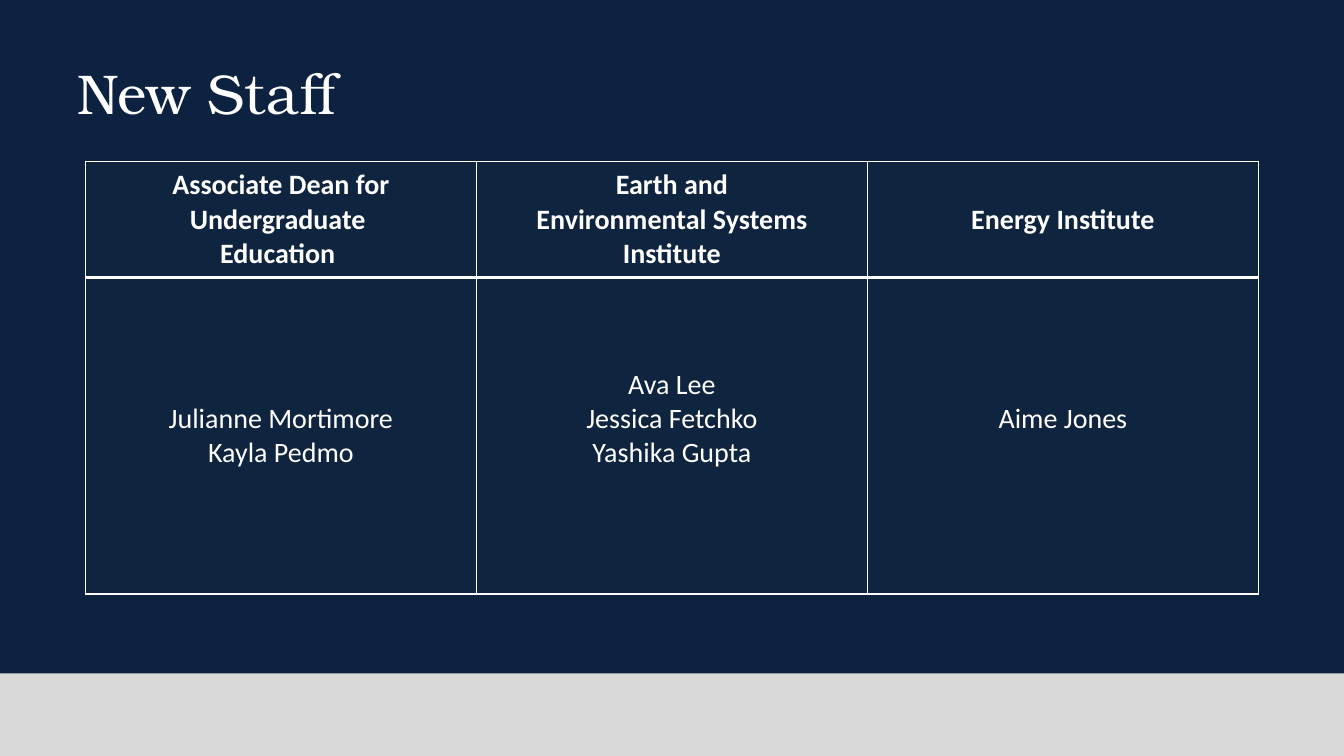
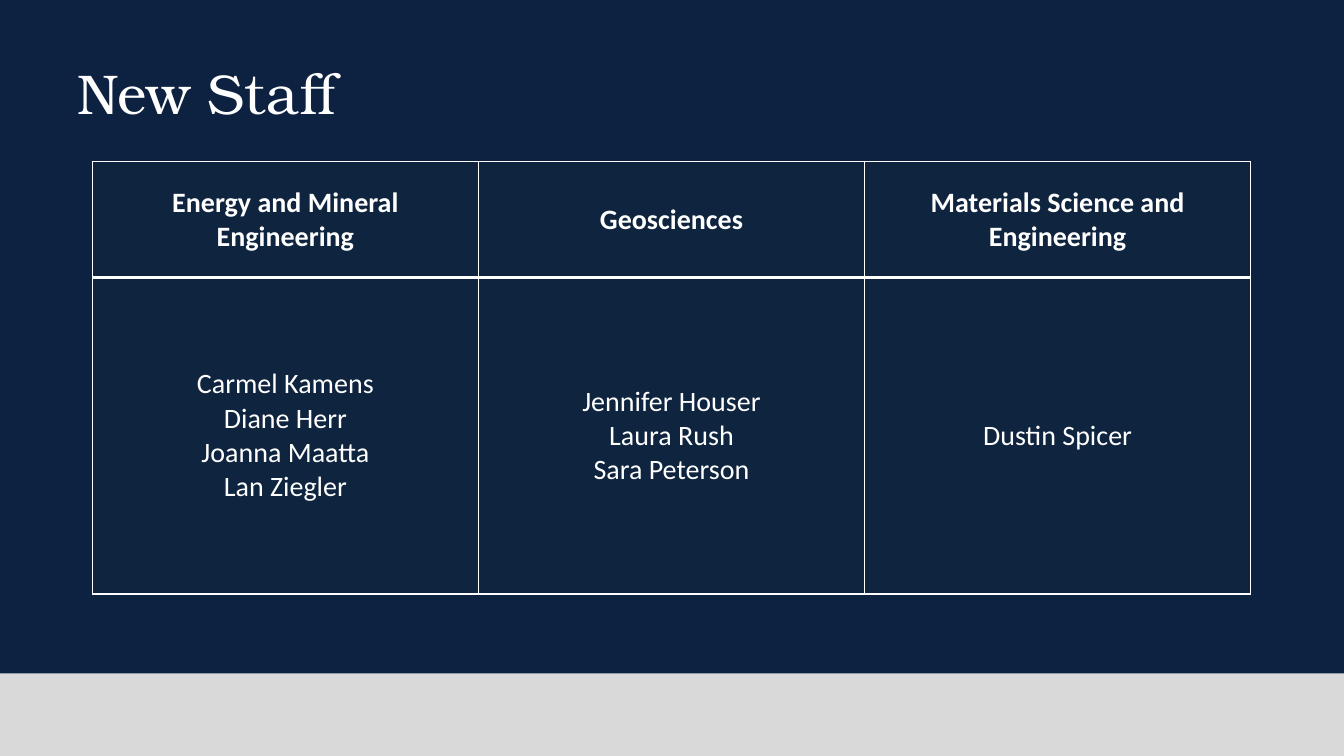
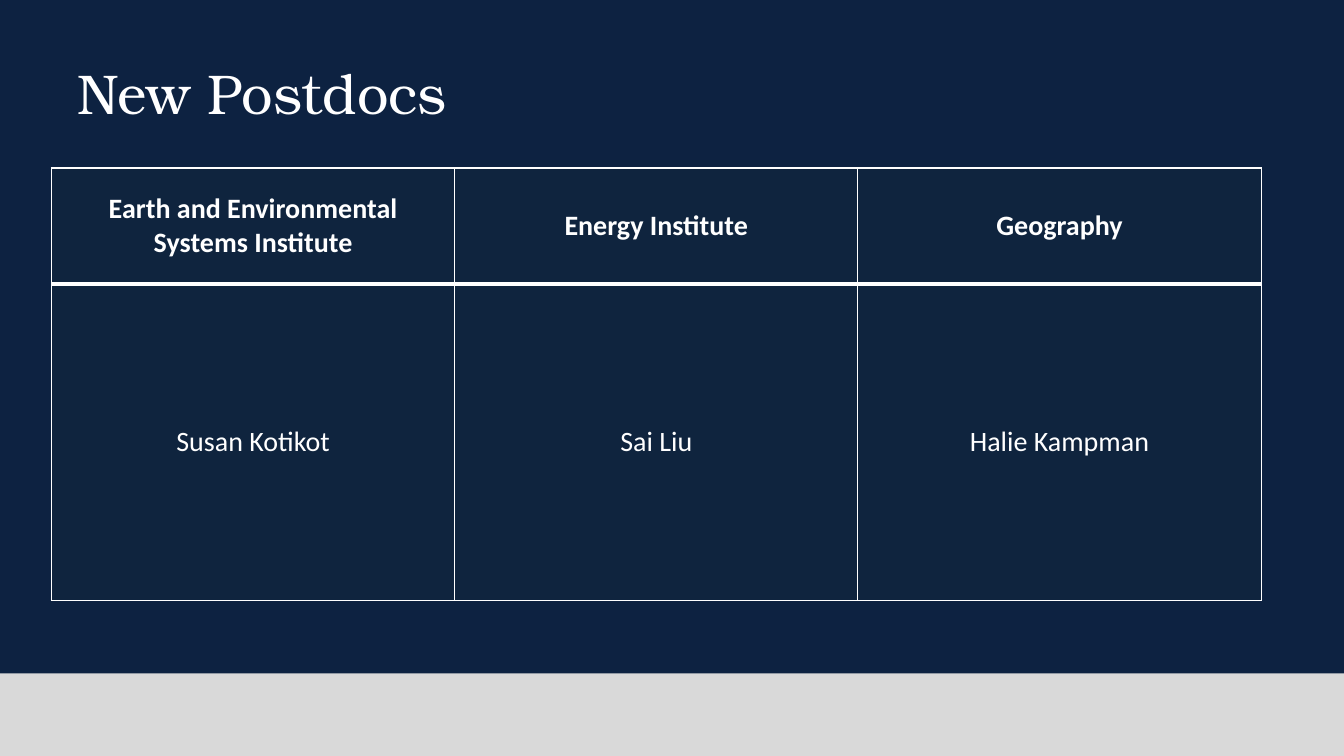
from dataclasses import dataclass

from pptx import Presentation
from pptx import util as u
from pptx.dml import color
from pptx.enum import shapes, text
from pptx.oxml import parse_xml
from pptx.oxml.ns import nsdecls

NAVY = "0D2241"
GREY = "D9D9D9"
CELL_NAVY = "0F243E"
WHITE = "FFFFFF"
TITLE_FONT = "TeX Gyre Bonum"
BODY_FONT = "Calibri"
PAGE_WIDTH, PAGE_HEIGHT = 960, 540
ROW_HEIGHTS = (82.8, 226)
THIN, THICK = 1, 3


@dataclass(frozen=True)
class Band:
    top: float
    height: float
    fill: str


@dataclass(frozen=True)
class Group:
    heading: str
    names: str
    lift: float = 0


@dataclass(frozen=True)
class Roster:
    title: str
    left: float
    top: float
    column_width: float
    groups: tuple[Group, ...]


BANDS = (Band(0, 482.4, NAVY), Band(481, 59, GREY))

ROSTERS = (
    Roster("New Staff", 61, 115.5, 279.3, (
        Group("Associate Dean for Undergraduate \nEducation ",
              "Julianne Mortimore\nKayla Pedmo"),
        Group("Earth and\nEnvironmental Systems Institute",
              "Ava Lee\nJessica Fetchko\nYashika Gupta", 24),
        Group("Energy Institute", "Aime Jones", 24),
    )),
    Roster("New Staff", 66, 115.5, 275.8, (
        Group("Energy and Mineral Engineering",
              "Carmel Kamens\nDiane Herr\nJoanna Maatta\nLan Ziegler"),
        Group("Geosciences", "Jennifer Houser\nLaura Rush\nSara Peterson"),
        Group("Materials Science and Engineering", "Dustin Spicer"),
    )),
    Roster("New Postdocs", 36.8, 120, 288, (
        Group("Earth and Environmental Systems Institute", "Susan Kotikot"),
        Group("Energy Institute", "Sai Liu"),
        Group("Geography", "Halie Kampman"),
    )),
)


def rgb(value: str) -> color.RGBColor:
    return color.RGBColor.from_string(value)


def style_text(frame, font: str, size: float, bold: bool, align) -> None:
    for para in frame.paragraphs:
        para.alignment = align
        for span in para.runs:
            span.font.name = font
            span.font.size = u.Pt(size)
            span.font.bold = bold
            span.font.color.rgb = rgb(WHITE)


def add_band(page, band: Band) -> None:
    shape = page.shapes.add_shape(
        shapes.MSO_SHAPE.RECTANGLE, u.Pt(0), u.Pt(band.top),
        u.Pt(PAGE_WIDTH), u.Pt(band.height))
    shape.shadow.inherit = False
    shape.fill.solid()
    shape.fill.fore_color.rgb = rgb(band.fill)
    shape.line.fill.background()


def add_title(page, title: str) -> None:
    box = page.shapes.add_textbox(u.Pt(48), u.Pt(26), u.Pt(864), u.Pt(80))
    frame = box.text_frame
    frame.word_wrap = True
    frame.vertical_anchor = text.MSO_ANCHOR.MIDDLE
    frame.text = title
    style_text(frame, TITLE_FONT, 40, False, text.PP_ALIGN.LEFT)


def set_borders(cell, top: float, bottom: float) -> None:
    properties = cell._tc.get_or_add_tcPr()
    widths = {"lnL": THIN, "lnR": THIN, "lnT": top, "lnB": bottom}
    for index, (tag, width) in enumerate(widths.items()):
        properties.insert(index, parse_xml(
            f'<a:{tag} {nsdecls("a")} w="{u.Pt(width)}"><a:solidFill>'
            f'<a:srgbClr val="{WHITE}"/></a:solidFill></a:{tag}>'))


def fill_cell(cell, content: str, header: bool, lift: float) -> None:
    cell.text_frame.text = content
    cell.vertical_anchor = text.MSO_ANCHOR.MIDDLE
    cell.margin_left = cell.margin_right = u.Pt(8)
    cell.margin_top = u.Pt(4)
    cell.margin_bottom = u.Pt(4 + lift)
    cell.fill.solid()
    cell.fill.fore_color.rgb = rgb(CELL_NAVY)
    set_borders(cell, THIN if header else THICK, THICK if header else THIN)
    style_text(cell.text_frame, BODY_FONT, 20, header, text.PP_ALIGN.CENTER)


def add_roster_table(page, roster: Roster) -> None:
    count = len(roster.groups)
    table = page.shapes.add_table(
        len(ROW_HEIGHTS), count, u.Pt(roster.left), u.Pt(roster.top),
        u.Pt(roster.column_width * count), u.Pt(sum(ROW_HEIGHTS))).table
    table.first_row = False
    table.horz_banding = False
    for row, height in zip(table.rows, ROW_HEIGHTS):
        row.height = u.Pt(height)
    for index, group in enumerate(roster.groups):
        table.columns[index].width = u.Pt(roster.column_width)
        fill_cell(table.cell(0, index), group.heading, True, 0)
        fill_cell(table.cell(1, index), group.names, False, group.lift)


def main() -> None:
    deck = Presentation()
    deck.slide_width = u.Pt(PAGE_WIDTH)
    deck.slide_height = u.Pt(PAGE_HEIGHT)
    for roster in ROSTERS:
        page = deck.slides.add_slide(deck.slide_layouts[6])
        for band in BANDS:
            add_band(page, band)
        add_title(page, roster.title)
        add_roster_table(page, roster)
    deck.save("out.pptx")


if __name__ == "__main__":
    main()
